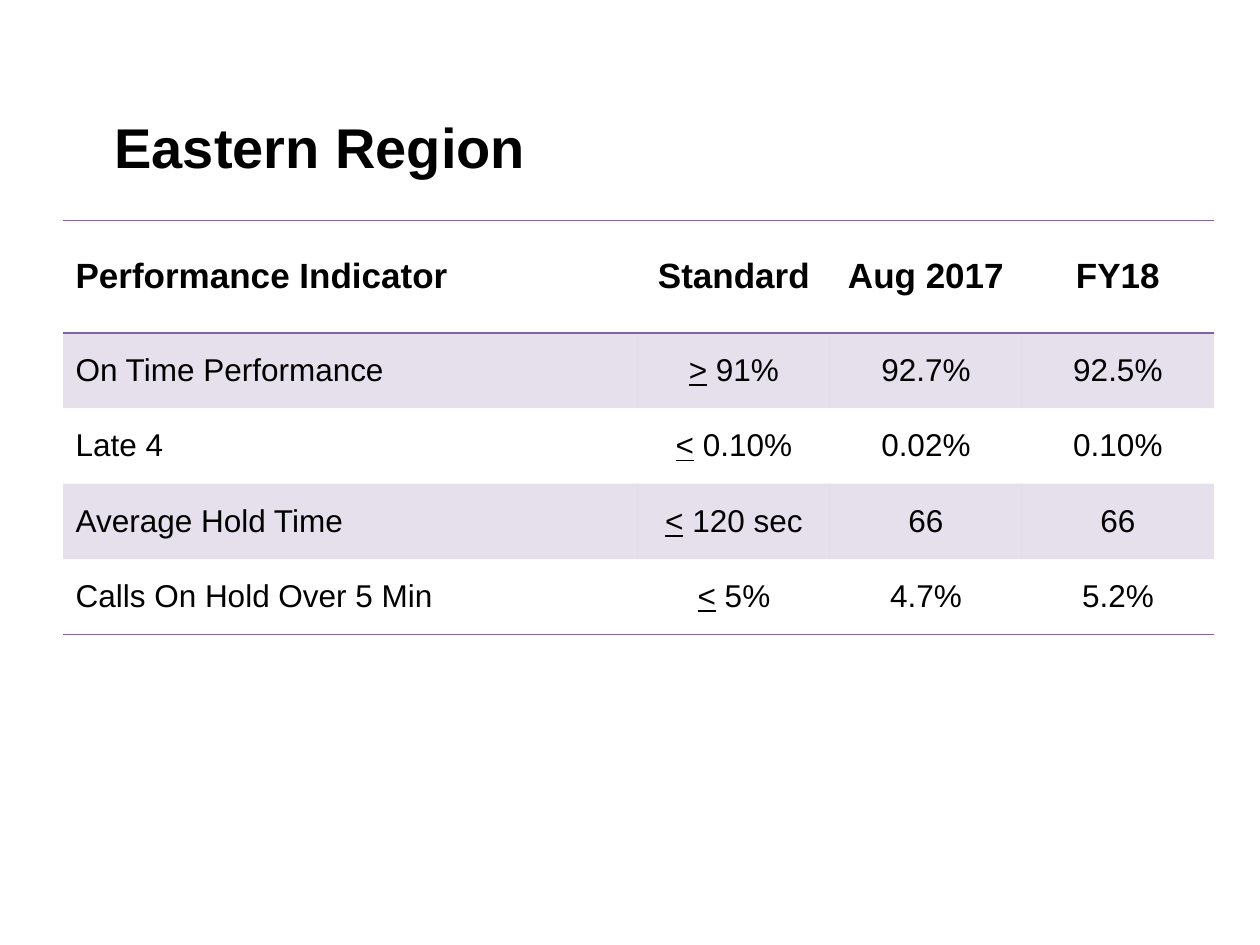
from dataclasses import dataclass

from lxml.etree import SubElement
from pptx import Presentation
from pptx.dml.color import RGBColor
from pptx.enum.text import MSO_ANCHOR, PP_ALIGN
from pptx.oxml import parse_xml
from pptx.oxml.ns import nsdecls, qn
from pptx.util import Cm, Pt

FONT = "Arial"
HUES = {"text": "000000", "purple": "8064A2"}
PLAIN = "{2D5ABB26-0587-4C30-8999-92F81FD0307C}"  # table style without grid
WIDTHS = [11.59, 3.87, 3.87, 3.87]
HEIGHTS = [2.26, 1.52, 1.52, 1.52, 1.52]


@dataclass
class Entry:
    name: str
    sign: str
    goal: str
    month: str
    year: str


HEADS = ["Performance Indicator", "Standard", "Aug 2017", "FY18"]
ENTRIES = [
    Entry("On Time Performance", ">", " 91%", "92.7%", "92.5%"),
    Entry("Late 4", "<", " 0.10%", "0.02%", "0.10%"),
    Entry("Average Hold Time", "<", " 120 sec", "66", "66"),
    Entry("Calls On Hold Over 5 Min", "<", " 5%", "4.7%", "5.2%"),
]


def add_run(para, text: str, size: int, bold: bool = False, under: bool = False) -> None:
    run = para.add_run()
    run.text = text
    font = run.font
    font.name, font.size = FONT, Pt(size)
    font.bold, font.underline = bold, under
    font.color.rgb = RGBColor.from_string(HUES["text"])


def add_edge(cell, side: str) -> None:
    """Rule one side of a cell; call before the fill is set, top first."""
    cell._tc.get_or_add_tcPr().append(parse_xml(
        f'<a:{side} {nsdecls("a")} w="{Pt(1)}"><a:solidFill>'
        f'<a:srgbClr val="{HUES["purple"]}"/></a:solidFill></a:{side}>'))


def set_fill(cell, band: bool) -> None:
    """Give a banded cell a 20 % tint and any other cell no fill."""
    if not band:
        cell.fill.background()
        return
    cell.fill.solid()
    cell.fill.fore_color.rgb = RGBColor.from_string(HUES["purple"])
    color = cell._tc.tcPr.find(qn("a:solidFill")).find(qn("a:srgbClr"))
    SubElement(color, qn("a:alpha"), val="20000")


def add_title(slide, text: str) -> None:
    box = slide.shapes.add_textbox(Cm(2.06), Cm(2.13), Cm(21.31), Cm(1.63))
    frame = box.text_frame
    frame.word_wrap = True
    frame.vertical_anchor = MSO_ANCHOR.MIDDLE
    add_run(frame.paragraphs[0], text, 32, bold=True)


def add_grid(slide) -> None:
    frame = slide.shapes.add_table(
        len(HEIGHTS), len(WIDTHS), Cm(1.27), Cm(4.45),
        Cm(sum(WIDTHS)), Cm(sum(HEIGHTS)))
    table = frame.table
    table._tbl.tblPr.find(qn("a:tableStyleId")).text = PLAIN
    table.first_row = table.horz_banding = False
    for col, width in zip(table.columns, WIDTHS):
        col.width = Cm(width)
    for row, height in zip(table.rows, HEIGHTS):
        row.height = Cm(height)

    rows = [[[head] for head in HEADS]]
    rows += [[[e.name], [e.sign, e.goal], [e.month], [e.year]] for e in ENTRIES]
    last = len(rows) - 1
    for r, row in enumerate(rows):
        for c, parts in enumerate(row):
            cell = table.cell(r, c)
            cell.vertical_anchor = MSO_ANCHOR.MIDDLE
            para = cell.text_frame.paragraphs[0]
            para.alignment = PP_ALIGN.CENTER if c else PP_ALIGN.LEFT
            for part in parts:
                add_run(para, part, 18 if r else 20, bold=r == 0,
                        under=part in ("<", ">"))
            if r == 0:
                add_edge(cell, "lnT")
            if r in (0, last):
                add_edge(cell, "lnB")
            set_fill(cell, band=r % 2 == 1)


def main() -> None:
    deck = Presentation()
    deck.slide_width, deck.slide_height = Cm(25.4), Cm(19.05)
    slide = deck.slides.add_slide(deck.slide_layouts[6])
    add_title(slide, "Eastern Region")
    add_grid(slide)
    deck.save("out.pptx")


if __name__ == "__main__":
    main()
